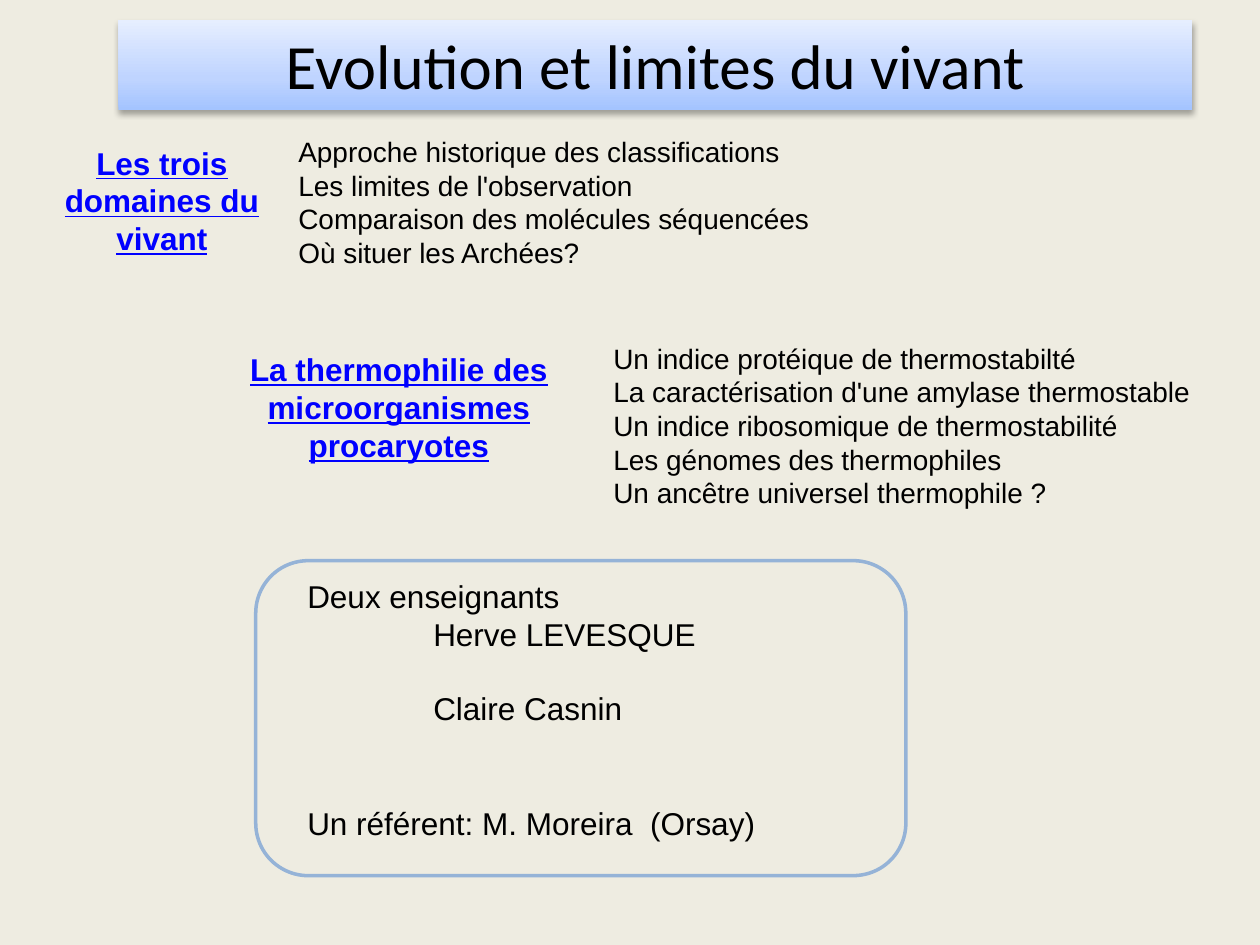
from dataclasses import dataclass

from lxml.etree import fromstring
from pptx import Presentation
from pptx.dml.color import RGBColor
from pptx.enum.shapes import MSO_SHAPE
from pptx.enum.text import MSO_ANCHOR, PP_ALIGN
from pptx.util import Emu, Pt

PX = 9144  # EMU per px, at 100 px to the inch
A_NS = "http://schemas.openxmlformats.org/drawingml/2006/main"
COLORS = {
    "background": "EEECE1",
    "text": "000000",
    "heading": "0000FF",
    "frame": "95B3D7",
    "title_bottom": "A4C4FF",
    "title_middle": "BFD4FF",
    "title_top": "E6EEFF",
    "shadow": "000000",
}


@dataclass(frozen=True)
class Box:
    left: int
    top: int
    width: int
    height: int

    def emu(self) -> list[Emu]:
        return [Emu(v * PX) for v in (self.left, self.top, self.width, self.height)]


@dataclass(frozen=True)
class TextStyle:
    size: int
    font: str = "Arial"
    color: str = "text"
    heading: bool = False
    align: PP_ALIGN = PP_ALIGN.LEFT


@dataclass(frozen=True)
class TextBlock:
    box: Box
    lines: tuple[str, ...]
    style: TextStyle
    wrap: bool = True


TITLE = TextStyle(36, font="Calibri", align=PP_ALIGN.CENTER)
HEADING = TextStyle(18, color="heading", heading=True, align=PP_ALIGN.CENTER)
TOPICS = TextStyle(16)
TEACHERS = TextStyle(18)

BLOCKS = (
    TextBlock(Box(227, 102, 430, 141), (
        "Approche historique des classifications",
        "Les limites de l'observation",
        "Comparaison des molécules séquencées",
        "Où situer les Archées?",
    ), TOPICS),
    TextBlock(Box(23, 109, 211, 101), ("Les trois domaines du vivant",), HEADING),
    TextBlock(Box(172, 273, 289, 131),
              ("La thermophilie des microorganismes procaryotes",), HEADING),
    TextBlock(Box(477, 266, 500, 145), (
        "Un indice protéique de thermostabilté",
        "La caractérisation d'une amylase thermostable",
        "Un indice ribosomique de thermostabilité",
        "Les génomes des thermophiles",
        "Un ancêtre universel thermophile ?",
    ), TOPICS),
    TextBlock(Box(234, 633, 379, 40), ("Un référent: M. Moreira  (Orsay)",),
              TEACHERS, wrap=False),
)
TEACHER_LIST = TextBlock(
    Box(234, 453, 422, 162),
    ("Deux enseignants", "Herve LEVESQUE", "Claire Casnin"), TEACHERS)


def rgb(name: str) -> RGBColor:
    return RGBColor.from_string(COLORS[name])


def write_lines(tf, lines: tuple[str, ...], style: TextStyle) -> None:
    tf.text = "\n".join(lines)
    tf.vertical_anchor = MSO_ANCHOR.TOP
    for p in tf.paragraphs:
        p.alignment = style.align
        for r in p.runs:
            r.font.size = Pt(style.size)
            r.font.name = style.font
            r.font.color.rgb = rgb(style.color)
            if style.heading:
                r.font.bold = r.font.underline = True


def add_text(slide, block: TextBlock):
    tf = slide.shapes.add_textbox(*block.box.emu()).text_frame
    tf.word_wrap = block.wrap
    write_lines(tf, block.lines, block.style)
    return tf


def add_teacher_list(slide) -> None:
    """Add the list with the names indented and a gap between them."""
    _, *names = add_text(slide, TEACHER_LIST).paragraphs
    for p in names:
        p._p.get_or_add_pPr().set("marL", str(100 * PX))
    names[-1].space_before = Pt(21)


def add_title(slide) -> None:
    """Add the title bar with its three-stop gradient and soft shadow."""
    sp = slide.shapes.add_shape(MSO_SHAPE.RECTANGLE, *Box(94, 16, 852, 71).emu())
    sp.line.fill.background()
    sp.text_frame.word_wrap = True
    write_lines(sp.text_frame, ("Evolution et limites du vivant",), TITLE)
    stops = "".join(
        f'<a:gs pos="{pos * 1000}"><a:srgbClr val="{COLORS[name]}"/></a:gs>'
        for pos, name in ((0, "title_bottom"), (35, "title_middle"), (100, "title_top")))
    gradient = fromstring(
        f'<a:gradFill xmlns:a="{A_NS}" rotWithShape="1"><a:gsLst>{stops}</a:gsLst>'
        '<a:lin ang="16200000" scaled="0"/></a:gradFill>')
    shadow = fromstring(
        f'<a:effectLst xmlns:a="{A_NS}"><a:outerShdw blurRad="{Pt(3.5)}" '
        f'dist="{Pt(2.2)}" dir="5400000" rotWithShape="0">'
        f'<a:srgbClr val="{COLORS["shadow"]}"><a:alpha val="32000"/></a:srgbClr>'
        '</a:outerShdw></a:effectLst>')
    props = sp._element.spPr
    props.find(f"{{{A_NS}}}prstGeom").addnext(gradient)
    props.append(shadow)


def add_frame(slide) -> None:
    sp = slide.shapes.add_shape(
        MSO_SHAPE.ROUNDED_RECTANGLE, *Box(203, 445, 516, 250).emu())
    sp.shadow.inherit = False
    sp.fill.background()
    sp.line.color.rgb = rgb("frame")
    sp.line.width = Pt(2)


def main() -> None:
    prs = Presentation()
    prs.slide_width, prs.slide_height = Emu(1000 * PX), Emu(750 * PX)
    s = prs.slides.add_slide(prs.slide_layouts[6])
    s.background.fill.solid()
    s.background.fill.fore_color.rgb = rgb("background")
    add_title(s)
    add_frame(s)
    add_teacher_list(s)
    for block in BLOCKS:
        add_text(s, block)
    prs.save("out.pptx")


if __name__ == "__main__":
    main()
